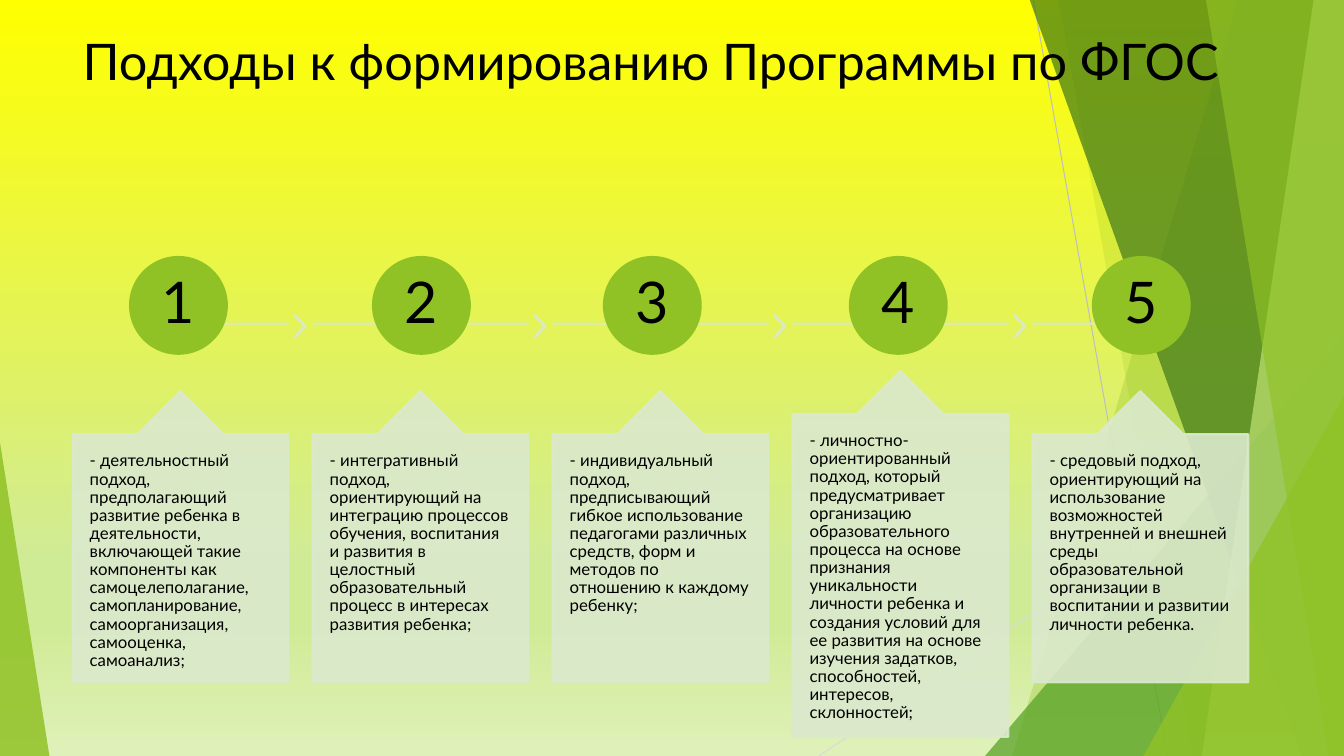
from lxml import etree
from pptx import Presentation
from pptx.dml.color import RGBColor
from pptx.enum.shapes import MSO_CONNECTOR as Connector, MSO_SHAPE as Preset
from pptx.enum.text import MSO_ANCHOR as Anchor, MSO_AUTO_SIZE as AutoSize, PP_ALIGN as Align
from pptx.oxml.ns import qn
from pptx.util import Inches, Pt

COLORS = {
    "text": "000000", "green": "90C226", "grass": "54A021", "forest": "3F7819",
    "lime": "C0E474", "pale": "DBE9CD", "gray": "BFBFBF", "silver": "D9D9D9",
}
BACKGROUND = [(0, "FFFF00"), (74, "D0EB96"), (83, "D0EB96"), (100, "DFF1B9")]
WIDTH, HEIGHT = 13.33, 7.5
FACETS = [
    ("band", (12.28, 10.04), "green", 30),
    ("band", (10.5, 11.83), "green", 20),
    ("triangle", (9.77, 3.33, 3.56, 4.17, 1), "grass", 72),
    ("band", (10.21, 12.91), "forest", 70),
    ("band", (13.03, 11.92), "lime", 70),
    ("band", (11.96, 13.18), "green", 65),
    ("triangle", (11.34, 3.93, 1.99, 3.57, 1), "green", 80),
    ("triangle", (0, 4.39, 0.49, 3.11, 0), "green", 85),
]
APPROACHES = [
    (1.29, "- деятельностный подход, предполагающий развитие ребенка в деятельности, "
           "включающей такие компоненты как самоцелеполагание, самопланирование, "
           "самоорганизация, самооценка, самоанализ;"),
    (3.7, "- интегративный подход, ориентирующий на интеграцию процессов обучения, "
          "воспитания и развития в целостный образовательный процесс в интересах "
          "развития ребенка;"),
    (5.99, "- индивидуальный подход, предписывающий гибкое использование педагогами "
           "различных средств, форм и методов по отношению к каждому ребенку;"),
    (8.43, "- личностно-ориентированный подход, который предусматривает организацию "
           "образовательного процесса на основе признания уникальности личности ребенка "
           "и создания условий для ее развития на основе изучения задатков, "
           "способностей, интересов, склонностей;"),
    (10.84, "- cредовый подход, ориентирующий на использование возможностей внутренней "
            "и внешней среды образовательной организации в воспитании и развитии "
            "личности ребенка."),
]
LEFT, PITCH, CARD_WIDTH = 0.72, 2.38, 2.14
TALL_CARD = 3


def write_text(shape, text, *, size, align=Align.LEFT, anchor=Anchor.TOP,
               margins=(0.1, 0.05), spacing=0.9, after=0.35):
    frame = shape.text_frame
    frame.word_wrap = True
    frame.auto_size = AutoSize.NONE
    frame.vertical_anchor = anchor
    frame.margin_left = frame.margin_right = Inches(margins[0])
    frame.margin_top = frame.margin_bottom = Inches(margins[1])
    paragraph = frame.paragraphs[0]
    paragraph.alignment = align
    paragraph.line_spacing = spacing
    paragraph.space_before = Pt(0)
    paragraph.space_after = Pt(size * after)
    run = paragraph.add_run()
    run.text = text
    run.font.name = "Lato"
    run.font.size = Pt(size)
    run.font.color.rgb = RGBColor.from_string(COLORS["text"])


class SlideBuilder:
    def __init__(self, presentation):
        self.slide = presentation.slides.add_slide(presentation.slide_layouts[5])
        self.shapes = self.slide.shapes

    def background(self, stops):
        fill = self.slide.background.fill
        fill.gradient()
        fill.gradient_angle = 270
        stop_list = next(self.slide.element.iter(qn("a:gsLst")))
        for stop in list(stop_list):
            stop_list.remove(stop)
        for position, color in stops:
            stop = etree.SubElement(stop_list, qn("a:gs"), pos=str(position * 1000))
            etree.SubElement(stop, qn("a:srgbClr"), val=color)

    def title(self, text, left, top, width, height):
        title = self.shapes.title
        title.left, title.top = Inches(left), Inches(top)
        title.width, title.height = Inches(width), Inches(height)
        title.element.getparent().append(title.element)
        write_text(title, text, size=36, spacing=1, after=0)

    def set_alpha(self, shape, alpha):
        for color in shape.element.spPr.iter(qn("a:srgbClr")):
            etree.SubElement(color, qn("a:alpha"), val=str(alpha * 1000))

    def paint(self, shape, color, alpha, outline):
        shape.shadow.inherit = False
        rgb = RGBColor.from_string(COLORS[color])
        shape.fill.solid()
        shape.fill.fore_color.rgb = rgb
        if outline:
            shape.line.color.rgb = rgb
            shape.line.width = Pt(outline)
        else:
            shape.line.fill.background()
        if alpha < 100:
            self.set_alpha(shape, alpha)

    def preset(self, kind, left, top, width, height, color, alpha=100,
               adjustments=(), outline=1.5):
        shape = self.shapes.add_shape(
            kind, Inches(left), Inches(top), Inches(width), Inches(height))
        for index, value in enumerate(adjustments):
            shape.adjustments[index] = value
        self.paint(shape, color, alpha, outline)
        return shape

    def band(self, top_x, bottom_x, color, alpha):
        corners = [(top_x, -0.01), (WIDTH, -0.01), (WIDTH, HEIGHT), (bottom_x, HEIGHT)]
        points = [(Inches(x), Inches(y)) for x, y in corners]
        builder = self.shapes.build_freeform(*points[0])
        builder.add_line_segments(points[1:], close=True)
        self.paint(builder.convert_to_shape(), color, alpha, 0)

    def line(self, start, end, color, width, alpha=100):
        connector = self.shapes.add_connector(
            Connector.STRAIGHT, *(Inches(value) for value in (*start, *end)))
        connector.line.color.rgb = RGBColor.from_string(COLORS[color])
        connector.line.width = Pt(width)
        etree.SubElement(connector.element.spPr, qn("a:effectLst"))
        if alpha < 100:
            self.set_alpha(connector, alpha)

    def decoration(self):
        self.line((10.25, 0), (11.58, HEIGHT), "gray", 0.75)
        self.line((WIDTH, 4.03), (8.12, HEIGHT), "silver", 0.75)
        for kind, geometry, color, alpha in FACETS:
            if kind == "band":
                self.band(*geometry, color, alpha)
            else:
                *box, apex = geometry
                self.preset(Preset.ISOSCELES_TRIANGLE, *box, color, alpha, [apex], 0)

    def approach(self, index, circle_left, text):
        left = LEFT + index * PITCH
        middle, right = left + CARD_WIDTH / 2, left + CARD_WIDTH
        last = len(APPROACHES) - 1
        start = middle + 0.12 if index == 0 else left
        end = middle if index == last else right
        self.line((start, 3.21), (end, 3.21), "pale", 1.5, 90)
        if index < last:
            self.preset(Preset.CHEVRON, right + 0.06, 3.13, 0.11, 0.21, "pale", 90, [0.9])
        circle = self.preset(Preset.OVAL, circle_left, 2.55, 0.96, 0.96, "green")
        write_text(circle, str(index + 1), size=41, align=Align.CENTER,
                   anchor=Anchor.MIDDLE, margins=(0.04, 0.04))
        top, height = (3.68, 3.63) if index == TALL_CARD else (3.88, 2.89)
        card = self.preset(Preset.UP_ARROW_CALLOUT, left, top, CARD_WIDTH, height,
                           "pale", 90, [0.5, 0.2, 0.2, 1])
        write_text(card, text, size=12, margins=(0.17, 0.18))


def main():
    presentation = Presentation()
    presentation.slide_width = Inches(WIDTH)
    presentation.slide_height = Inches(HEIGHT)
    builder = SlideBuilder(presentation)
    builder.background(BACKGROUND)
    builder.decoration()
    builder.title("Подходы к формированию Программы по ФГОС", LEFT, 0.25, 11.65, 1.44)
    for index, (circle_left, text) in enumerate(APPROACHES):
        builder.approach(index, circle_left, text)
    presentation.save("out.pptx")


if __name__ == "__main__":
    main()
